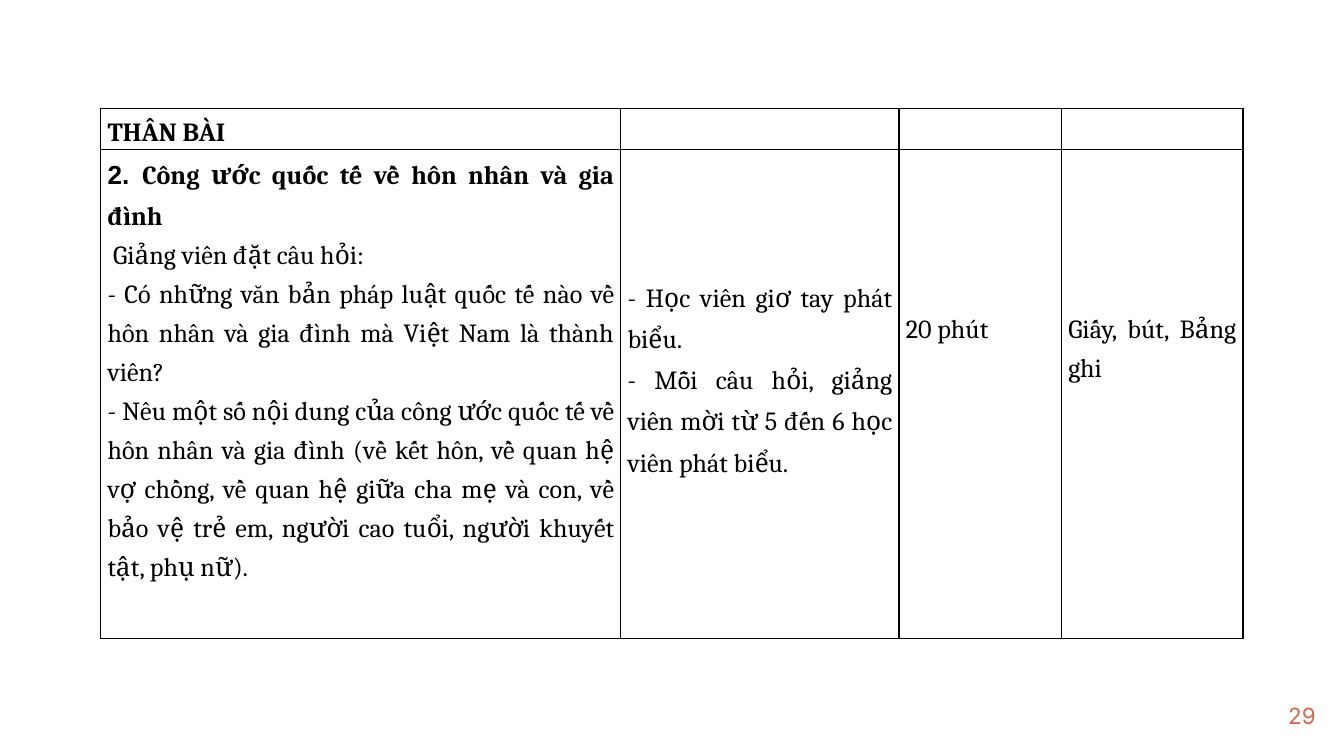
from dataclasses import dataclass

from lxml.etree import SubElement
from pptx import Presentation
from pptx.dml.color import RGBColor
from pptx.enum.text import MSO_ANCHOR, PP_ALIGN
from pptx.oxml.ns import qn
from pptx.util import Inches, Pt


@dataclass(frozen=True)
class Theme:
    ink: str = "000000"
    accent: str = "D26A50"
    body_font: str = "Cambria"
    label_font: str = "Arial"
    number_font: str = "Inter"
    body_size: float = 14
    number_size: float = 12
    border_width: float = 0.75
    loose: float = 1.3
    fixed: Pt = Pt(22)


@dataclass(frozen=True)
class Line:
    text: str
    spacing: object
    bold: bool = False
    label: str = ""


class LessonSlide:
    def __init__(self, slide, theme):
        self.slide = slide
        self.theme = theme

    def style_run(self, run, font, size, color, bold=False):
        run.font.name = font
        run.font.size = Pt(size)
        run.font.bold = bold
        run.font.color.rgb = RGBColor.from_string(color)

    def border(self, cell):
        properties = cell._tc.get_or_add_tcPr()
        for side in ("a:lnL", "a:lnR", "a:lnT", "a:lnB"):
            edge = SubElement(properties, qn(side), w=str(Pt(self.theme.border_width)))
            fill = SubElement(edge, qn("a:solidFill"))
            SubElement(fill, qn("a:srgbClr"), val=self.theme.ink)

    def fill_cell(self, cell, lines, top):
        theme = self.theme
        self.border(cell)
        cell.fill.background()
        cell.margin_left = cell.margin_right = Inches(0.05)
        cell.margin_top, cell.margin_bottom = Inches(top), 0
        frame = cell.text_frame
        frame.text = "\n".join(line.label + line.text for line in lines)
        if not lines:
            # Keep an empty cell from stretching its row
            end = frame.paragraphs[0]._p.get_or_add_endParaRPr()
            end.set("sz", str(int(theme.body_size * 100)))
        for paragraph, line in zip(frame.paragraphs, lines):
            paragraph.alignment = PP_ALIGN.JUSTIFY
            paragraph.line_spacing = line.spacing
            run = paragraph.runs[0]
            if line.label:
                run.text = line.label
                self.style_run(run, theme.label_font, theme.body_size, theme.ink, line.bold)
                run = paragraph.add_run()
                run.text = line.text
            self.style_run(run, theme.body_font, theme.body_size, theme.ink, line.bold)

    def table(self, left, top, widths, heights, rows, row_tops):
        table = self.slide.shapes.add_table(
            len(heights), len(widths), Inches(left), Inches(top),
            Inches(sum(widths)), Inches(sum(heights))).table
        table.first_row = table.horz_banding = False
        for column, width in zip(table.columns, widths):
            column.width = Inches(width)
        for row, height, contents, tops in zip(table.rows, heights, rows, row_tops):
            row.height = Inches(height)
            for cell, lines, cell_top in zip(row.cells, contents, tops):
                self.fill_cell(cell, lines, cell_top)

    def page_number(self, number, left, top, width, height):
        box = self.slide.shapes.add_textbox(
            Inches(left), Inches(top), Inches(width), Inches(height))
        frame = box.text_frame
        frame.word_wrap = True
        frame.vertical_anchor = MSO_ANCHOR.MIDDLE
        frame.margin_left = frame.margin_right = 0
        frame.margin_top = frame.margin_bottom = 0
        frame.text = number
        paragraph = frame.paragraphs[0]
        paragraph.alignment = PP_ALIGN.RIGHT
        self.style_run(paragraph.runs[0], self.theme.number_font,
                       self.theme.number_size, self.theme.accent)


def main():
    theme = Theme()
    presentation = Presentation()
    # Widescreen, 16:9
    presentation.slide_width = Inches(10)
    presentation.slide_height = Inches(10 * 9 / 16)
    lesson = LessonSlide(
        presentation.slides.add_slide(presentation.slide_layouts[6]), theme)

    # Page number
    lesson.page_number("29", 9.19, 5.11, 0.6, 0.43)

    # Lesson plan: teacher's work, students' work, time, materials
    section = [Line("THÂN BÀI", theme.loose, bold=True)]
    teacher = [
        Line("Công ước quốc tế về hôn nhân và gia đình", theme.fixed,
             bold=True, label="2. "),
        Line(" Giảng viên đặt câu hỏi:", theme.loose),
        Line("- Có những văn bản pháp luật quốc tế nào về hôn nhân và gia đình "
             "mà Việt Nam là thành viên?", theme.loose),
        Line("- Nêu một số nội dung của công ước quốc tế về hôn nhân và gia đình "
             "(về kết hôn, về quan hệ vợ chồng, về quan hệ giữa cha mẹ và con, "
             "về bảo vệ trẻ em, người cao tuổi, người khuyết tật, phụ nữ).", theme.loose),
    ]
    students = [
        Line("- Học viên giơ tay phát biểu.", theme.fixed),
        Line("- Mỗi câu hỏi, giảng viên mời từ 5 đến 6 học viên phát biểu.", theme.fixed),
    ]
    time = [Line("20 phút", theme.loose)]
    materials = [Line("Giấy, bút, Bảng ghi", theme.loose)]

    lesson.table(
        0.75, 0.81,
        widths=[3.87, 2.07, 1.21, 1.35],
        heights=[0.28, 3.64],
        rows=[[section, [], [], []], [teacher, students, time, materials]],
        row_tops=[[0, 0, 0, 0], [0, 0.92, 1.16, 1.16]])

    presentation.save("out.pptx")


if __name__ == "__main__":
    main()
